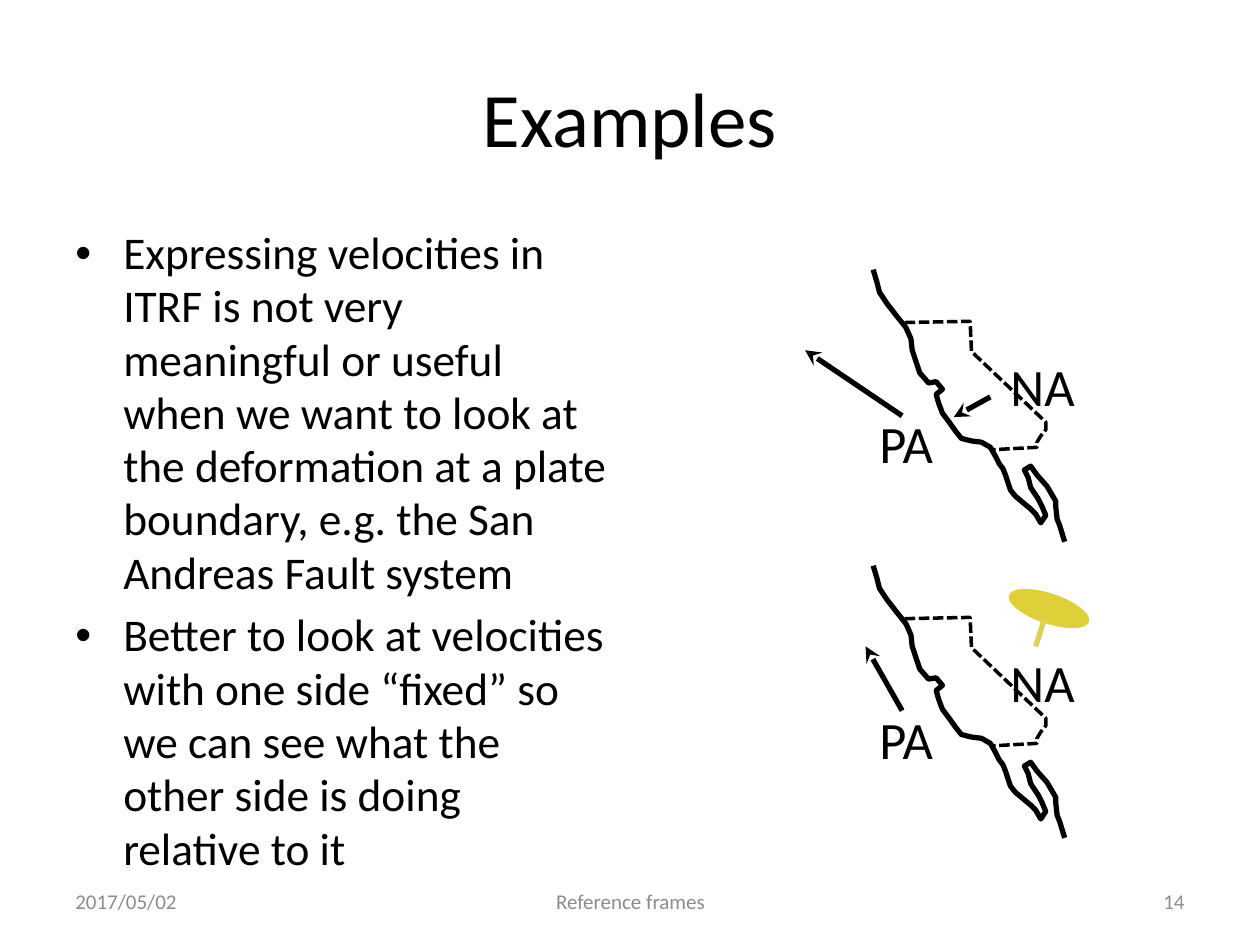
"""Build a slide on velocities in different reference frames."""
from dataclasses import dataclass

from lxml import etree
from pptx import Presentation
from pptx import util as u
from pptx.dml.color import RGBColor
from pptx.enum import dml, shapes, text
from pptx.oxml import ns

BLACK = RGBColor(0, 0, 0)
GREY = RGBColor(0x8C, 0x8C, 0x8C)
GOLD = RGBColor(0xDF, 0xD0, 0x3A)
STRAW = RGBColor(0xDF, 0xCF, 0x58)
LEFT, MID, RIGHT = text.PP_ALIGN.LEFT, text.PP_ALIGN.CENTER, text.PP_ALIGN.RIGHT
STEP = 2.35

COAST = [
    (6.93, 2.14), (6.96, 2.24), (6.98, 2.32), (7.04, 2.41), (7.11, 2.5),
    (7.19, 2.6), (7.23, 2.69), (7.24, 2.78), (7.27, 2.87), (7.3, 2.96),
    (7.37, 3.04), (7.43, 3.03), (7.48, 3.09), (7.43, 3.13), (7.45, 3.2),
    (7.48, 3.28), (7.54, 3.36), (7.59, 3.43), (7.63, 3.48), (7.71, 3.5),
    (7.79, 3.51), (7.86, 3.55), (7.9, 3.62), (7.93, 3.68), (7.96, 3.72),
    (7.98, 3.77), (8, 3.83), (8.02, 3.89), (8.06, 3.94), (8.12, 3.99),
    (8.18, 4.04), (8.22, 4.08), (8.26, 4.15), (8.3, 4.09), (8.27, 4.02),
    (8.24, 3.96), (8.18, 3.87), (8.16, 3.79), (8.13, 3.73), (8.18, 3.7),
    (8.23, 3.77), (8.31, 3.86), (8.38, 3.98), (8.38, 4.03), (8.39, 4.12),
    (8.41, 4.17), (8.45, 4.3),
]
STATE = [
    (7.18, 2.56), (7.7, 2.55), (7.71, 2.79), (8.3, 3.35), (8.3, 3.41),
    (8.26, 3.46), (8.23, 3.51), (8.23, 3.55), (7.86, 3.57),
]


@dataclass
class Label:
    words: list[str]
    box: tuple[float, float, float, float]
    size: float
    align: text.PP_ALIGN = LEFT
    color: RGBColor = BLACK
    anchor: text.MSO_ANCHOR = text.MSO_ANCHOR.MIDDLE
    inset: tuple[float, float] = (0.1, 0.05)
    wrap: bool = True
    bullet: bool = False


@dataclass
class Stroke:
    start: tuple[float, float]
    end: tuple[float, float]
    color: RGBColor = BLACK
    head: bool = True


@dataclass
class Plate:
    drop: float
    moves: list[Stroke]


TEXTS = [
    Label(["Examples"], (0.5, 0.3, 9, 1.25), 44, MID),
    Label([
        "Expressing velocities in ITRF is not very meaningful or useful when we "
        "want to look at the deformation at a plate boundary, e.g. the San "
        "Andreas Fault system",
        "Better to look at velocities with one side “fixed” so we can see what "
        "the other side is doing relative to it",
    ], (0.5, 1.75, 4.42, 4.95), 25.9, anchor=text.MSO_ANCHOR.TOP, bullet=True),
    Label(["2017/05/02"], (0.5, 6.95, 2.33, 0.4), 12, color=GREY),
    Label(["Reference frames"], (3.42, 6.95, 3.17, 0.4), 12, MID, GREY),
    Label(["14"], (7.17, 6.95, 2.33, 0.4), 12, RIGHT, GREY),
]
PLATES = [
    Plate(0, [Stroke((6.39, 2.78), (7.16, 3.3)), Stroke((7.57, 3.31), (7.86, 3.15))]),
    Plate(STEP, [Stroke((6.87, 5.13), (7.16, 5.64))]),
]


def assign(obj, vals: dict) -> None:
    """Set each named attribute on an object."""
    for name, val in vals.items():
        setattr(obj, name, val)


def write(slide, lab: Label) -> None:
    """Add a text box with one paragraph for each entry."""
    frame = slide.shapes.add_textbox(*map(u.Inches, lab.box)).text_frame
    side, edge = map(u.Inches, lab.inset)
    assign(frame, {
        "word_wrap": lab.wrap, "vertical_anchor": lab.anchor,
        "margin_left": side, "margin_right": side,
        "margin_top": edge, "margin_bottom": edge,
    })
    for i, words in enumerate(lab.words):
        para = frame.add_paragraph() if i else frame.paragraphs[0]
        para.alignment = lab.align
        run = para.add_run()
        run.text = words
        assign(run.font, {"name": "Calibri", "size": u.Pt(lab.size)})
        run.font.color.rgb = lab.color
        if lab.bullet:
            assign(para, {"space_before": u.Pt(5.2), "line_spacing": 0.98})
            props = para._p.get_or_add_pPr()
            props.set("marL", str(u.Inches(0.38)))
            props.set("indent", str(u.Inches(-0.38)))
            etree.SubElement(props, ns.qn("a:buFont")).set("typeface", "Arial")
            etree.SubElement(props, ns.qn("a:buChar")).set("char", "•")


def trace(slide, points: list, drop: float, vals: dict) -> None:
    """Draw an open outline, moved down by the given drop."""
    spots = [(u.Inches(x), u.Inches(y + drop)) for x, y in points]
    pen = slide.shapes.build_freeform(*spots[0])
    pen.add_line_segments(spots[1:], close=False)
    shape = pen.convert_to_shape()
    shape.shadow.inherit = False
    shape.fill.background()
    shape.line.color.rgb = BLACK
    assign(shape.line, vals)


def link(slide, mark: Stroke) -> None:
    """Draw a straight line, with an arrowhead at its start if wanted."""
    ends = map(u.Inches, mark.start + mark.end)
    line = slide.shapes.add_connector(shapes.MSO_CONNECTOR.STRAIGHT, *ends)
    line.line.color.rgb = mark.color
    line.line.width = u.Pt(3)
    if mark.head:
        head = etree.SubElement(line.line._get_or_add_ln(), ns.qn("a:headEnd"))
        head.set("type", "stealth")
    etree.SubElement(line._element.spPr, ns.qn("a:effectLst"))


def chart(slide, plate: Plate) -> None:
    """Draw one map with its plate names and motion arrows."""
    trace(slide, COAST, plate.drop, {"width": u.Pt(3)})
    trace(slide, STATE, plate.drop,
          {"width": u.Pt(2), "dash_style": dml.MSO_LINE.SQUARE_DOT})
    for move in plate.moves:
        link(slide, move)
    for name, left, top, wide in (("PA", 6.92, 3.2, 0.57), ("NA", 7.96, 2.75, 0.63)):
        write(slide, Label([name], (left, top + plate.drop, wide, 0.62), 30,
                           inset=(0.06, 0.06), wrap=False))


def pin(slide) -> None:
    """Draw the tack that holds one plate fixed."""
    box = map(u.Inches, (7.99, 4.71, 0.67, 0.24))
    top = slide.shapes.add_shape(shapes.MSO_SHAPE.OVAL, *box)
    top.rotation = 18.4
    top.shadow.inherit = False
    top.fill.solid()
    top.fill.fore_color.rgb = GOLD
    top.line.fill.background()
    link(slide, Stroke((8.28, 4.94), (8.22, 5.13), STRAW, False))


def main() -> None:
    """Build and save the slide."""
    deck = Presentation()
    assign(deck, {"slide_width": u.Inches(10), "slide_height": u.Inches(7.5)})
    slide = deck.slides.add_slide(deck.slide_layouts[6])
    for lab in TEXTS:
        write(slide, lab)
    for plate in PLATES:
        chart(slide, plate)
    pin(slide)
    deck.save("out.pptx")


if __name__ == "__main__":
    main()
